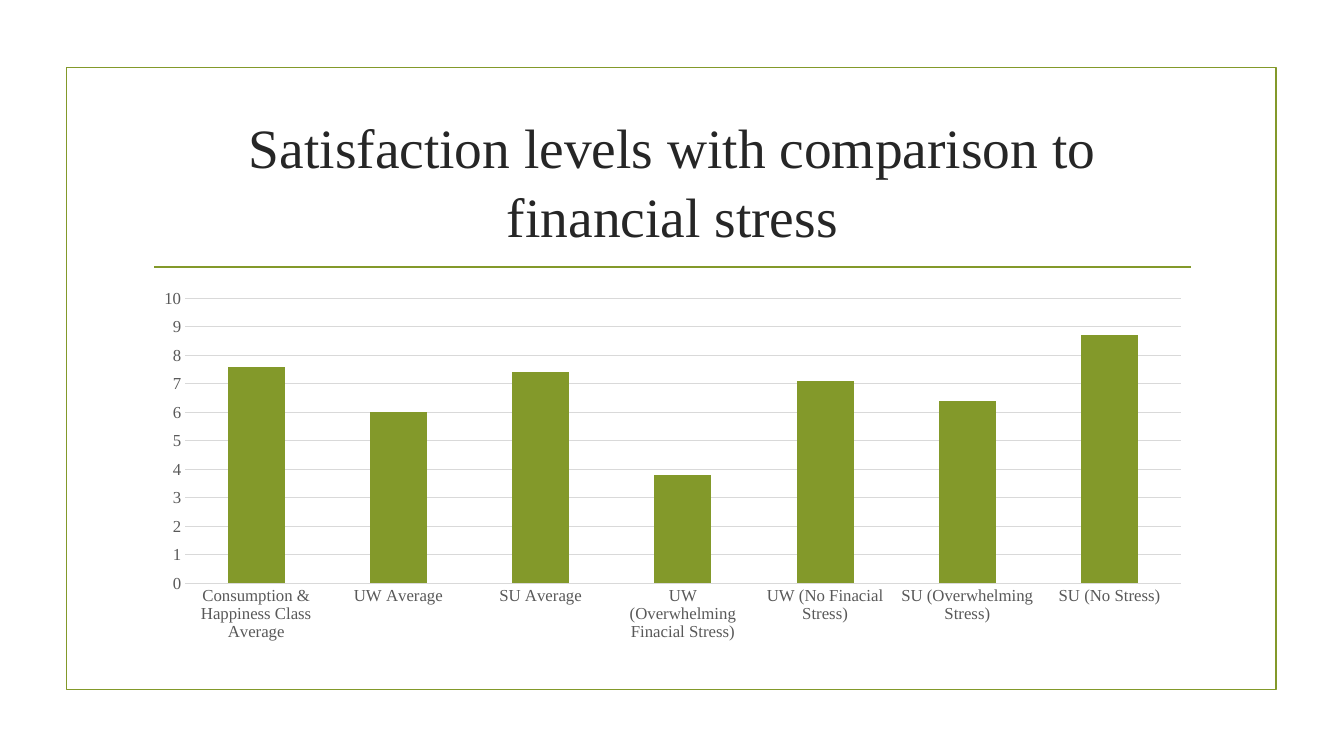
from dataclasses import dataclass

from lxml import etree
from pptx import Presentation
from pptx import util as u
from pptx.chart.data import CategoryChartData
from pptx.dml.color import RGBColor
from pptx.enum import chart as ch, shapes, text
from pptx.oxml.ns import qn

WIDE, HIGH = 13.33, 7.5


@dataclass(frozen=True)
class Theme:
    face: str = "Times New Roman"
    green: str = "83992A"
    dark: str = "262626"
    gray: str = "595959"
    grid: str = "D9D9D9"
    title: float = 39.6
    label: float = 12
    rule: float = 1.25
    hair: float = 0.75


def put(obj, vals):
    """Set each named attribute of obj."""
    for key, val in vals.items():
        setattr(obj, key, val)


class Board:
    """Holds the theme and slide; places boxes by shares of the slide."""

    def __init__(self, deck, theme):
        self.theme = theme
        self.slide = deck.slides.add_slide(deck.slide_layouts[5])
        self.size = deck.slide_width, deck.slide_height

    def spot(self, *parts):
        return [int(part * self.size[i % 2]) for i, part in enumerate(parts)]

    def font(self, font, size, color):
        put(font, {"name": self.theme.face, "size": u.Pt(size), "bold": False})
        font.color.rgb = RGBColor.from_string(color)

    def stroke(self, line, color, width):
        line.color.rgb = RGBColor.from_string(color)
        line.width = u.Pt(width)

    def frame(self, *box):
        rect = self.slide.shapes.add_shape(
            shapes.MSO_SHAPE.RECTANGLE, *self.spot(*box))
        rect.shadow.inherit = False
        rect.fill.background()
        self.stroke(rect.line, self.theme.green, self.theme.rule)

    def rule(self, *ends):
        line = self.slide.shapes.add_connector(
            shapes.MSO_CONNECTOR.STRAIGHT, *self.spot(*ends))
        etree.SubElement(line._element.spPr, qn("a:effectLst"))
        self.stroke(line.line, self.theme.green, self.theme.rule)

    def title(self, words, *box):
        head = self.slide.shapes.title
        put(head, dict(zip(("left", "top", "width", "height"), self.spot(*box))))
        put(head.text_frame, {
            "text": words, "word_wrap": True,
            "auto_size": text.MSO_AUTO_SIZE.NONE,
            "vertical_anchor": text.MSO_ANCHOR.MIDDLE})
        para = head.text_frame.paragraphs[0]
        put(para, {"alignment": text.PP_ALIGN.CENTER, "line_spacing": 1.03})
        self.font(para.runs[0].font, self.theme.title, self.theme.dark)

    def axis(self, axis, vals):
        put(axis, {"major_tick_mark": ch.XL_TICK_MARK.NONE,
                   "minor_tick_mark": ch.XL_TICK_MARK.NONE, **vals})
        axis.format.line.fill.background()
        self.font(axis.tick_labels.font, self.theme.label, self.theme.gray)

    def bars(self, name, rows, *box):
        data = CategoryChartData()
        data.categories = list(rows)
        data.add_series(name, rows.values())
        chart = self.slide.shapes.add_chart(
            ch.XL_CHART_TYPE.COLUMN_CLUSTERED, *self.spot(*box), data).chart
        put(chart, {"has_legend": False, "has_title": False})
        self.font(chart.font, self.theme.label, self.theme.gray)
        self.axis(chart.category_axis, {"has_major_gridlines": False})
        self.axis(chart.value_axis, {
            "has_major_gridlines": True, "minimum_scale": 0,
            "maximum_scale": 10, "major_unit": 1})
        self.stroke(chart.value_axis.major_gridlines.format.line,
                    self.theme.grid, self.theme.hair)
        plot = chart.plots[0]
        put(plot, {"gap_width": 150, "vary_by_categories": False})
        fill = plot.series[0].format.fill
        fill.solid()
        fill.fore_color.rgb = RGBColor.from_string(self.theme.green)


def main():
    deck = Presentation()
    put(deck, {"slide_width": u.Inches(WIDE), "slide_height": u.Inches(HIGH)})
    board = Board(deck, Theme())
    left, wide = 1.42 / WIDE, 10.5 / WIDE
    board.frame(0.66 / WIDE, 0.67 / HIGH, 12 / WIDE, 6.17 / HIGH)
    board.rule(1.53 / WIDE, 2.65 / HIGH, 11.81 / WIDE, 2.65 / HIGH)
    board.title("Satisfaction levels with comparison to financial stress",
                left, 1.07 / HIGH, wide, 1.43 / HIGH)
    board.bars("Series 1", {
        "Consumption & Happiness Class Average": 7.6,
        "UW Average": 6,
        "SU Average": 7.4,
        "UW (Overwhelming Finacial Stress)": 3.8,
        "UW (No Finacial Stress)": 7.1,
        "SU (Overwhelming Stress)": 6.4,
        "SU (No Stress)": 8.7,
    }, left, 2.8 / HIGH, wide, 3.63 / HIGH)
    deck.save("out.pptx")


if __name__ == "__main__":
    main()
